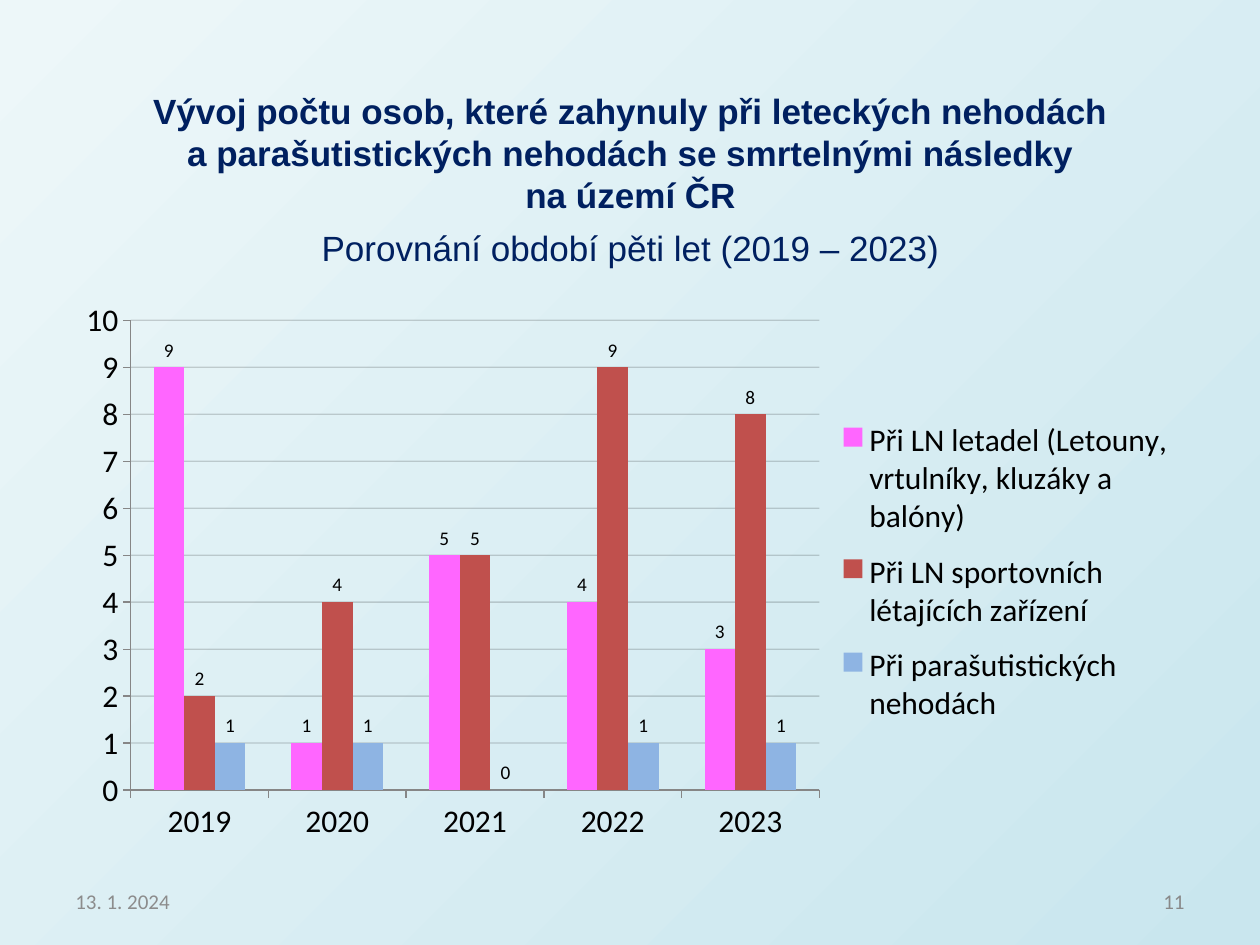
from dataclasses import dataclass

from lxml import etree
from pptx import Presentation
from pptx.chart.data import CategoryChartData
from pptx.dml.color import RGBColor
from pptx.enum.chart import XL_CHART_TYPE, XL_LABEL_POSITION, XL_LEGEND_POSITION, XL_TICK_MARK
from pptx.enum.text import MSO_ANCHOR, MSO_AUTO_SIZE, PP_ALIGN
from pptx.oxml.ns import qn
from pptx.util import Inches, Pt

CLUSTERED = XL_CHART_TYPE.COLUMN_CLUSTERED
OUTSIDE_END = XL_LABEL_POSITION.OUTSIDE_END
LEGEND_RIGHT = XL_LEGEND_POSITION.RIGHT
TICK_OUT, TICK_NONE = XL_TICK_MARK.OUTSIDE, XL_TICK_MARK.NONE
TOP, MIDDLE = MSO_ANCHOR.TOP, MSO_ANCHOR.MIDDLE
NO_FIT = MSO_AUTO_SIZE.NONE
LEFT, CENTER, RIGHT = PP_ALIGN.LEFT, PP_ALIGN.CENTER, PP_ALIGN.RIGHT
TITLE_ONLY = 5


@dataclass(frozen=True)
class Theme:
    """Colours, fonts and type sizes of the slide."""
    background: tuple = ("EDF7F9", "C9E6EE")
    heading: str = "002060"
    date: str = "8C8C8C"
    number: str = "898989"
    ink: str = "000000"
    axis: str = "868686"
    heading_font: str = "Arial"
    body_font: str = "Calibri"
    heading_size: int = 20
    footer_size: int = 12
    chart_size: int = 18
    label_size: int = 11


THEME = Theme()
HEADING = (
    "Vývoj počtu osob, které zahynuly při leteckých nehodách\v"
    "a parašutistických nehodách se smrtelnými následky\v"
    "na území ČR"
)
PERIOD = "Porovnání období pěti let (2019 – 2023)"
YEARS = ("2019", "2020", "2021", "2022", "2023")
DEATHS = (
    ("Při LN letadel (Letouny, vrtulníky, kluzáky a balóny)", (9, 1, 5, 4, 3), "FF66FF"),
    ("Při LN sportovních létajících zařízení", (2, 4, 5, 9, 8), "C0504D"),
    ("Při parašutistických nehodách", (1, 1, 0, 1, 1), "8EB4E3"),
)


def inches(*lengths):
    """Turn a box in inches into slide lengths."""
    return [Inches(length) for length in lengths]


def set_font(font, name, size, color, bold=False):
    """Set face, size, colour and weight of a font."""
    font.name, font.size, font.bold = name, Pt(size), bold
    font.color.rgb = RGBColor.from_string(color)


def paint_background(page):
    """Fill the slide with the diagonal gradient."""
    fill = page.background.fill
    fill.gradient()
    fill.gradient_angle = 315
    for stop, position, color in zip(fill.gradient_stops, (0, 1), THEME.background):
        stop.position = position
        stop.color.rgb = RGBColor.from_string(color)


def place_heading(page, box):
    """Put the heading and the period in the title placeholder."""
    title = page.shapes.title
    title.left, title.top, title.width, title.height = inches(*box)
    frame = title.text_frame
    frame.auto_size, frame.vertical_anchor = NO_FIT, TOP
    frame.text = f"{HEADING}\n{PERIOD}"
    for para, bold in zip(frame.paragraphs, (True, False)):
        para.alignment, para.space_before = CENTER, Pt(6)
        set_font(para.font, THEME.heading_font, THEME.heading_size, THEME.heading, bold)


def add_footer(page, box, text, color, alignment):
    """Add one footer text."""
    frame = page.shapes.add_textbox(*inches(*box)).text_frame
    frame.word_wrap, frame.vertical_anchor = True, MIDDLE
    para = frame.paragraphs[0]
    para.text, para.alignment = text, alignment
    set_font(para.font, THEME.body_font, THEME.footer_size, color)


def set_layout(parent, index, box, inner=False):
    """Fix the place of a chart part in fractions of the chart."""
    for old in parent.findall(qn("c:layout")):
        parent.remove(old)
    layout = etree.Element(qn("c:layout"))
    manual = etree.SubElement(layout, qn("c:manualLayout"))
    settings = [("layoutTarget", "inner")] if inner else []
    settings += [("xMode", "edge"), ("yMode", "edge"), *zip("xywh", box)]
    for tag, value in settings:
        etree.SubElement(manual, qn(f"c:{tag}")).set("val", str(value))
    parent.insert(index, layout)


def style_axes(chart):
    """Style both axes and the faint gridlines."""
    for axis in (chart.category_axis, chart.value_axis):
        axis.major_tick_mark, axis.minor_tick_mark = TICK_OUT, TICK_NONE
        axis.format.line.color.rgb = RGBColor.from_string(THEME.axis)
        axis.format.line.width = Pt(0.75)
    values = chart.value_axis
    values.minimum_scale, values.maximum_scale, values.major_unit = 0, 10, 1
    values.has_major_gridlines = True
    line = values.major_gridlines.format.line
    line.width = Pt(0.75)
    line.color.rgb = RGBColor.from_string(THEME.ink)
    for color in values.major_gridlines._xAx.find(qn("c:majorGridlines")).iter(qn("a:srgbClr")):
        etree.SubElement(color, qn("a:alpha")).set("val", "17000")


def style_series(plot):
    """Colour the columns and label their values."""
    plot.gap_width, plot.overlap, plot.vary_by_categories = 150, 0, False
    for series, (_, _, color) in zip(plot.series, DEATHS):
        series.format.fill.solid()
        series.format.fill.fore_color.rgb = RGBColor.from_string(color)
        labels = series.data_labels
        labels.show_value, labels.position = True, OUTSIDE_END
        set_font(labels.font, THEME.body_font, THEME.label_size, THEME.ink)


def add_deaths_chart(page, box):
    """Add the column chart of deaths by year."""
    data = CategoryChartData()
    data.categories = YEARS
    for name, values, _ in DEATHS:
        data.add_series(name, values)
    chart = page.shapes.add_chart(CLUSTERED, *inches(*box), data).chart
    chart.has_title = False
    set_font(chart.font, THEME.body_font, THEME.chart_size, THEME.ink)
    style_axes(chart)
    style_series(chart.plots[0])
    chart.has_legend = True
    chart.legend.position, chart.legend.include_in_layout = LEGEND_RIGHT, False
    root = chart.element
    set_layout(next(root.iter(qn("c:plotArea"))), 0, (0.06, 0.05, 0.61, 0.84), inner=True)
    set_layout(next(root.iter(qn("c:legend"))), 1, (0.68, 0.2, 0.31, 0.6))


def main():
    """Build and save the deck."""
    deck = Presentation()
    deck.slide_width, deck.slide_height = inches(10, 7.5)
    page = deck.slides.add_slide(deck.slide_layouts[TITLE_ONLY])
    paint_background(page)
    add_footer(page, (0.5, 6.95, 2.33, 0.4), "13. 1. 2024", THEME.date, LEFT)
    add_footer(page, (7.17, 6.95, 2.33, 0.4), "11", THEME.number, RIGHT)
    place_heading(page, (0.83, 0.66, 8.35, 1.53))
    add_deaths_chart(page, (0.5, 2.32, 8.96, 4.44))
    deck.save("out.pptx")


if __name__ == "__main__":
    main()
